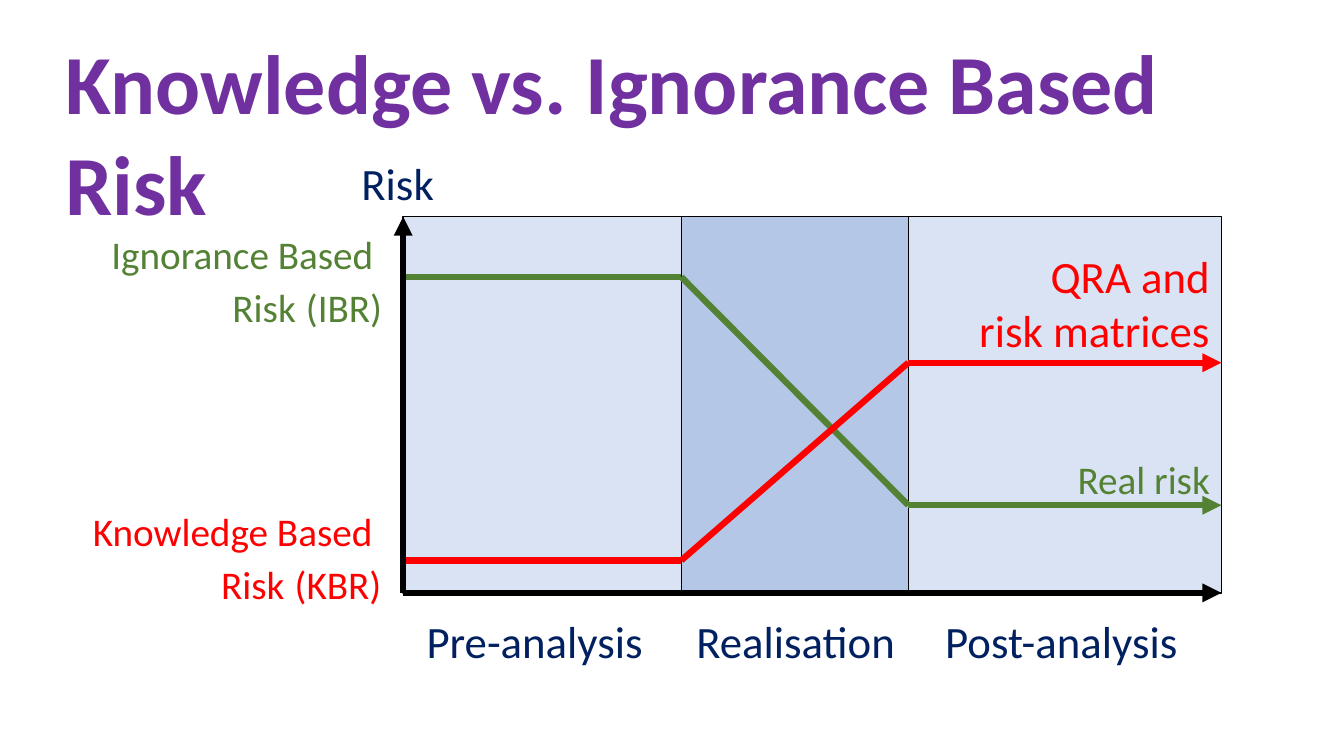
from itertools import pairwise
from lxml.etree import SubElement
from pptx import Presentation
from pptx.dml.color import RGBColor as Rgb
from pptx.enum.shapes import MSO_CONNECTOR as Conn, MSO_SHAPE as Shape
from pptx.enum.text import MSO_ANCHOR as Anchor, MSO_AUTO_SIZE as Fit, PP_ALIGN as Align
from pptx.oxml.ns import qn
from pptx.util import Cm, Pt

PURPLE = Rgb(0x70, 0x30, 0xA0)
NAVY = Rgb(0x00, 0x20, 0x60)
GREEN = Rgb(0x54, 0x82, 0x35)
RED = Rgb(0xFF, 0x00, 0x00)
BLACK = Rgb(0x00, 0x00, 0x00)
PALE = Rgb(0xDA, 0xE3, 0xF3)
BLUE = Rgb(0xB4, 0xC7, 0xE7)

LEFT, START, END, RIGHT = 10.16, 17.17, 22.89, 30.78
TOP, BASE = 5.46, 14.94


class Painter:
    font = "Calibri"
    stroke = Pt(4.5)

    def __init__(self, slide):
        self.slide = slide

    def style(self, run, size, color, bold=False):
        run.font.name = self.font
        run.font.size = Pt(size)
        run.font.color.rgb = color
        run.font.bold = bold

    def title(self, text, x, y, w, h):
        shape = self.slide.shapes.title
        shape.left, shape.top, shape.width, shape.height = map(Cm, (x, y, w, h))
        frame = shape.text_frame
        frame.text = text
        frame.word_wrap = True
        frame.auto_size = Fit.NONE
        frame.vertical_anchor = Anchor.TOP
        para = frame.paragraphs[0]
        para.alignment = Align.LEFT
        para.line_spacing = 1.0
        self.style(para.runs[0], 60, PURPLE, True)

    def label(self, text, x, y, w, h, color=NAVY, size=32, align=Align.LEFT):
        box = self.slide.shapes.add_textbox(*map(Cm, (x, y, w, h)))
        frame = box.text_frame
        frame.text = text
        frame.word_wrap = False
        for para in frame.paragraphs:
            para.alignment = align
            for run in para.runs:
                self.style(run, size, color)
        return frame

    def source(self, text, code, x, y, w, color):
        frame = self.label(text, x, y, w, 2.82, color, 28, Align.RIGHT)
        para = frame.paragraphs[-1]
        for part, size in ((" ", 32), (code, 28)):
            run = para.add_run()
            run.text = part
            self.style(run, size, color)

    def panel(self, x, end, fill):
        box = self.slide.shapes.add_shape(
            Shape.RECTANGLE, Cm(x), Cm(TOP), Cm(end - x), Cm(BASE - TOP))
        box.shadow.inherit = False
        box.fill.solid()
        box.fill.fore_color.rgb = fill
        box.line.color.rgb = BLACK
        box.line.width = Pt(1)

    def line(self, a, b, color, arrow=False):
        link = self.slide.shapes.add_connector(Conn.STRAIGHT, *map(Cm, (*a, *b)))
        link.line.color.rgb = color
        link.line.width = self.stroke
        if arrow:
            SubElement(link.line._get_or_add_ln(), qn("a:tailEnd"), type="triangle")
        SubElement(link._element.spPr, qn("a:effectLst"))

    def curve(self, first, last, color):
        dots = [(LEFT, first), (START, first), (END, last), (RIGHT, last)]
        for a, b in pairwise(dots):
            self.line(a, b, color, b[0] == RIGHT)


def main():
    deck = Presentation()
    deck.slide_width, deck.slide_height = Cm(33.87), Cm(19.05)
    art = Painter(deck.slides.add_slide(deck.slide_layouts[5]))

    art.title("Knowledge vs. Ignorance Based Risk", 1.4, 0.64, 30.66, 2.82)
    art.panel(LEFT, RIGHT, PALE)
    art.panel(START, END, BLUE)

    for phase, x, w in (("Pre-analysis", 10.5, 6.02),
                        ("Realisation", 17.3, 5.59),
                        ("Post-analysis", 23.57, 6.6)):
        art.label(phase, x, 15.34, w, 1.63)

    art.source("Ignorance Based \nRisk", "(IBR)", 2.46, 5.69, 7.42, GREEN)
    art.source("Knowledge Based \nRisk", "(KBR)", 2.01, 12.67, 7.85, RED)

    art.curve(6.98, 12.73, GREEN)
    art.curve(14.12, 9.14, RED)
    art.line((LEFT, BASE), (LEFT, TOP), BLACK, True)
    art.line((LEFT, BASE), (RIGHT, BASE), BLACK, True)

    art.label("Risk", 8.86, 3.81, 2.36, 1.63)
    art.label("QRA and\vrisk matrices", 24.36, 6.15, 6.38, 3, RED, 32, Align.RIGHT)
    art.label("Real risk", 26.85, 11.35, 3.89, 1.45, GREEN, 28, Align.RIGHT)

    deck.save("out.pptx")


if __name__ == "__main__":
    main()
